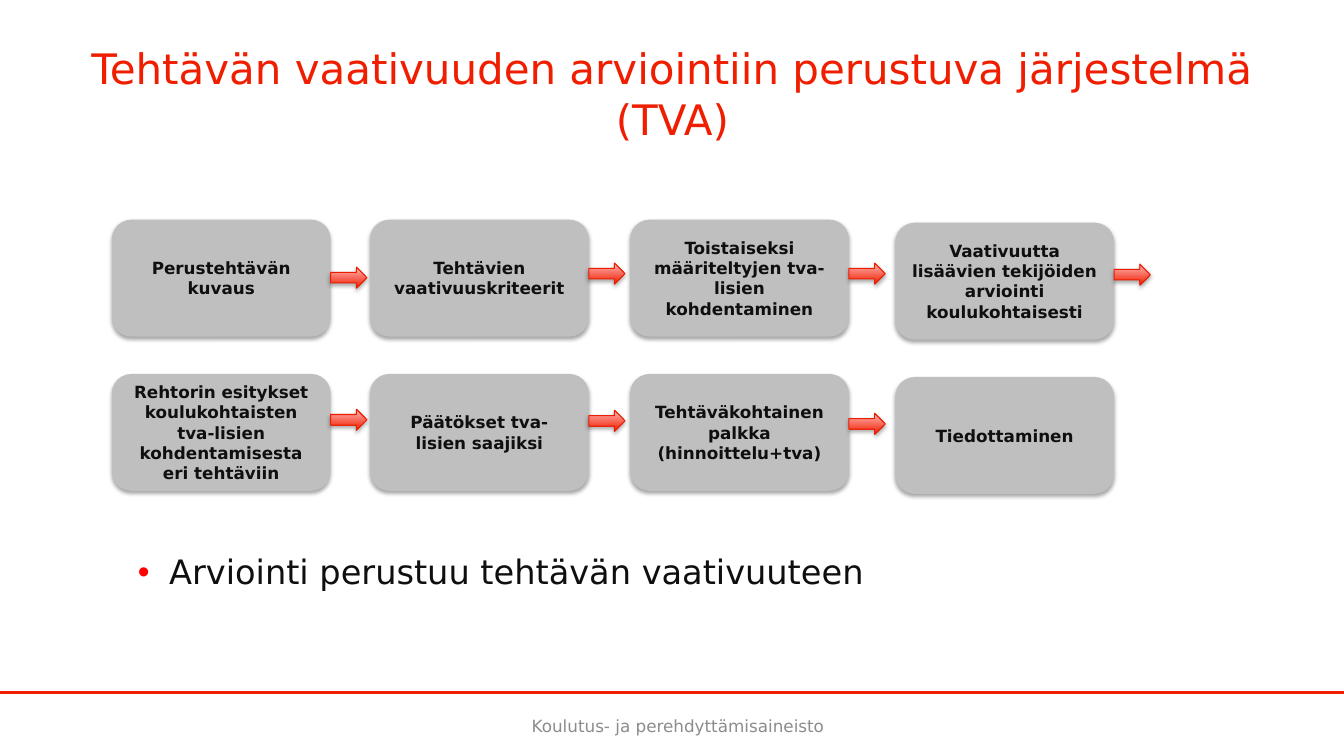
from lxml.etree import SubElement
from pptx import Presentation
from pptx.dml.color import RGBColor
from pptx.enum.shapes import MSO_CONNECTOR, MSO_SHAPE
from pptx.enum.text import MSO_ANCHOR as ANCHOR, PP_ALIGN as ALIGN
from pptx.oxml.ns import qn
from pptx.util import Inches, Pt

TITLE = "Tehtävän vaativuuden arviointiin perustuva järjestelmä (TVA)"
FOOTER = "Koulutus- ja perehdyttämisaineisto"
SUMMARY = "Arviointi perustuu tehtävän vaativuuteen"
# Each step: text, top of its arrow (None where the chain ends)
STEP_ROWS = [
    [("Perustehtävän kuvaus", 2.65),
     ("Tehtävien vaativuuskriteerit", 2.61),
     ("Toistaiseksi määriteltyjen tva-lisien kohdentaminen", 2.61),
     ("Vaativuutta lisäävien tekijöiden arviointi koulukohtaisesti", 2.62)],
    [("Rehtorin esitykset koulukohtaisten tva-lisien kohdentamisesta eri tehtäviin", 4.06),
     ("Päätökset tva-lisien saajiksi", 4.07),
     ("Tehtäväkohtainen palkka (hinnoittelu+tva)", 4.1),
     ("Tiedottaminen", None)],
]

SLIDE_W, SLIDE_H = 13.33, 7.5
COLUMN_LEFTS = [1.11, 3.67, 6.25, 8.88]
COLUMN_DROPS = [0, 0, 0, 0.03]
ROW_TOPS = [2.18, 3.71]
STEP_W, STEP_H = 2.17, 1.16
ARROW_W, ARROW_H = 0.36, 0.21
RULE_Y = 6.87

FONT = "DejaVu Sans"
RED, ARROW_EDGE, PINK = "F01E00", "EB1D00", "FFB6B5"
INK, STEP_GREY, FOOTER_GREY, BULLET_RED = "0F0F0F", "BFBFBF", "8C8C8C", "FF0000"
TITLE_FONT = {"size": Pt(30), "name": FONT}
STEP_FONT = {"size": Pt(12), "name": FONT, "bold": True}
SUMMARY_FONT = {"size": Pt(24), "name": FONT}
FOOTER_FONT = {"size": Pt(12), "name": FONT}


def rgb(color):
    return RGBColor.from_string(color)


def write(shape, text, font_format, color, anchor=ANCHOR.MIDDLE, align=ALIGN.CENTER):
    frame = shape.text_frame
    frame.word_wrap = True
    frame.vertical_anchor = anchor
    paragraph = frame.paragraphs[0]
    paragraph.alignment = align
    run = paragraph.add_run()
    run.text = text
    for name, value in font_format.items():
        setattr(run.font, name, value)
    run.font.color.rgb = rgb(color)
    return paragraph


def add_text(slide, box, *args, **kwargs):
    return write(slide.shapes.add_textbox(*map(Inches, box)), *args, **kwargs)


def add_bullet(paragraph, color, indent):
    props = paragraph._p.get_or_add_pPr()
    props.set("marL", str(Inches(indent)))
    props.set("indent", str(-Inches(indent)))
    SubElement(SubElement(props, qn("a:buClr")), qn("a:srgbClr"), val=color)
    SubElement(props, qn("a:buFont"), typeface="Arial")
    SubElement(props, qn("a:buChar"), char="•")


def add_soft_shadow(shape):
    shape.shadow.inherit = False
    effects = shape._element.spPr.find(qn("a:effectLst"))
    shadow = SubElement(effects, qn("a:outerShdw"), blurRad=str(Pt(3.1)),
                        dist=str(Pt(1.8)), dir="5400000", rotWithShape="0")
    black = SubElement(shadow, qn("a:srgbClr"), val="000000")
    SubElement(black, qn("a:alpha"), val="35000")


def add_step(slide, left, top, text):
    step = slide.shapes.add_shape(MSO_SHAPE.ROUNDED_RECTANGLE,
                                  *map(Inches, (left, top, STEP_W, STEP_H)))
    step.fill.solid()
    step.fill.fore_color.rgb = rgb(STEP_GREY)
    step.line.fill.background()
    add_soft_shadow(step)
    write(step, text, STEP_FONT, INK)


def add_arrow(slide, left, top):
    arrow = slide.shapes.add_shape(MSO_SHAPE.RIGHT_ARROW,
                                   *map(Inches, (left, top, ARROW_W, ARROW_H)))
    arrow.fill.gradient()
    arrow.fill.gradient_angle = 90
    for stop, color in zip(arrow.fill.gradient_stops, (RED, PINK)):
        stop.color.rgb = rgb(color)
    arrow.line.color.rgb = rgb(ARROW_EDGE)
    arrow.line.width = Pt(0.75)
    add_soft_shadow(arrow)


def add_rule(slide):
    rule = slide.shapes.add_connector(MSO_CONNECTOR.STRAIGHT, 0, Inches(RULE_Y),
                                      Inches(SLIDE_W), Inches(RULE_Y))
    rule.line.color.rgb = rgb(RED)
    rule.line.width = Pt(2)
    SubElement(rule._element.spPr, qn("a:effectLst"))


def main():
    deck = Presentation()
    deck.slide_width, deck.slide_height = Inches(SLIDE_W), Inches(SLIDE_H)
    slide = deck.slides.add_slide(deck.slide_layouts[6])

    add_rule(slide)
    add_text(slide, (0.67, 0.3, 12, 1.25), TITLE, TITLE_FONT, RED)
    add_text(slide, (4.17, 6.95, 5.11, 0.4), FOOTER, FOOTER_FONT, FOOTER_GREY,
             anchor=ANCHOR.BOTTOM)
    for row_top, steps in zip(ROW_TOPS, STEP_ROWS):
        for left, drop, (text, arrow_top) in zip(COLUMN_LEFTS, COLUMN_DROPS, steps):
            add_step(slide, left, row_top + drop, text)
            if arrow_top is not None:
                add_arrow(slide, left + STEP_W, arrow_top)
    summary = add_text(slide, (1.27, 5.42, 9.36, 0.5), SUMMARY, SUMMARY_FONT, INK,
                       anchor=ANCHOR.TOP, align=ALIGN.LEFT)
    add_bullet(summary, BULLET_RED, 0.31)

    deck.save("out.pptx")


if __name__ == "__main__":
    main()
